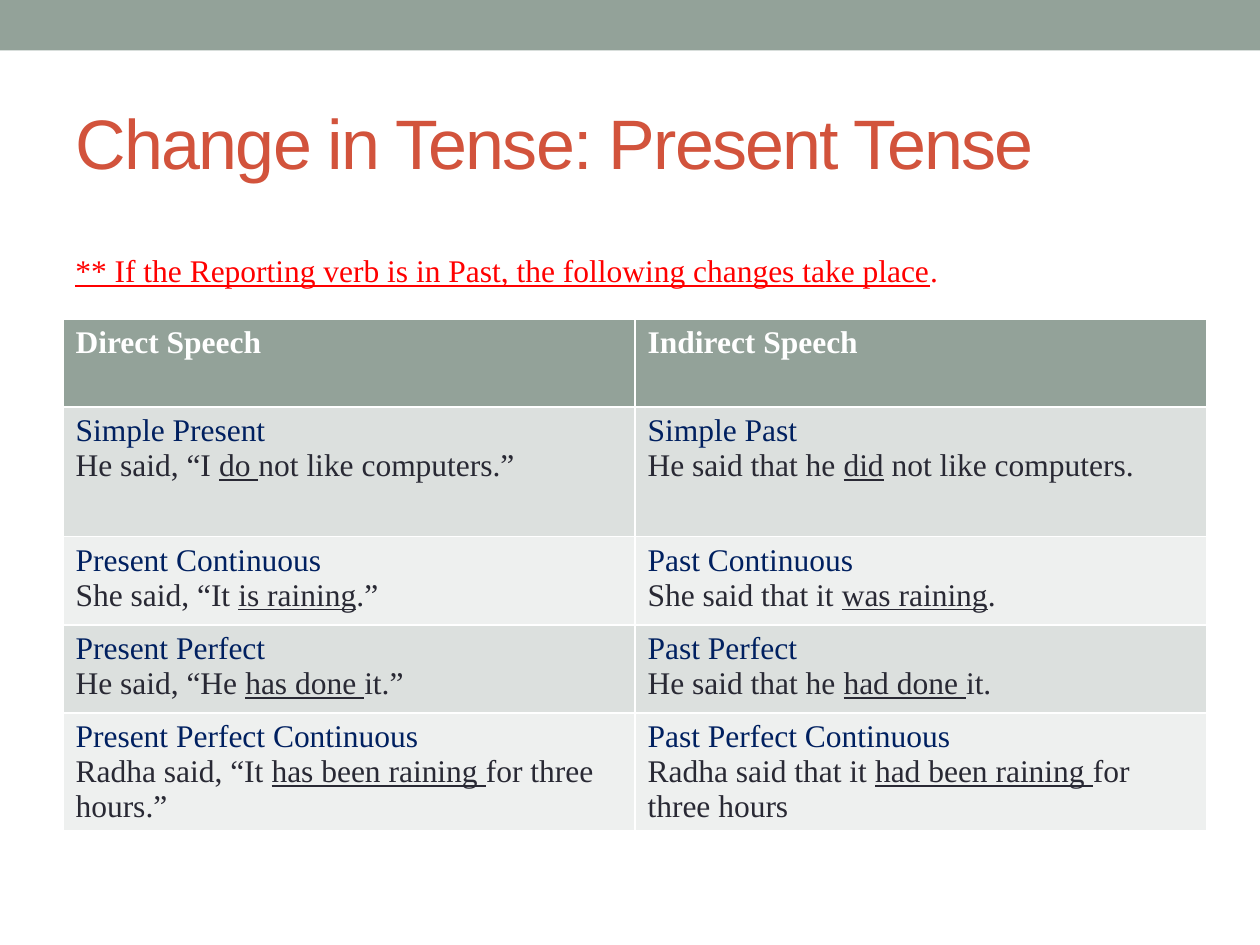
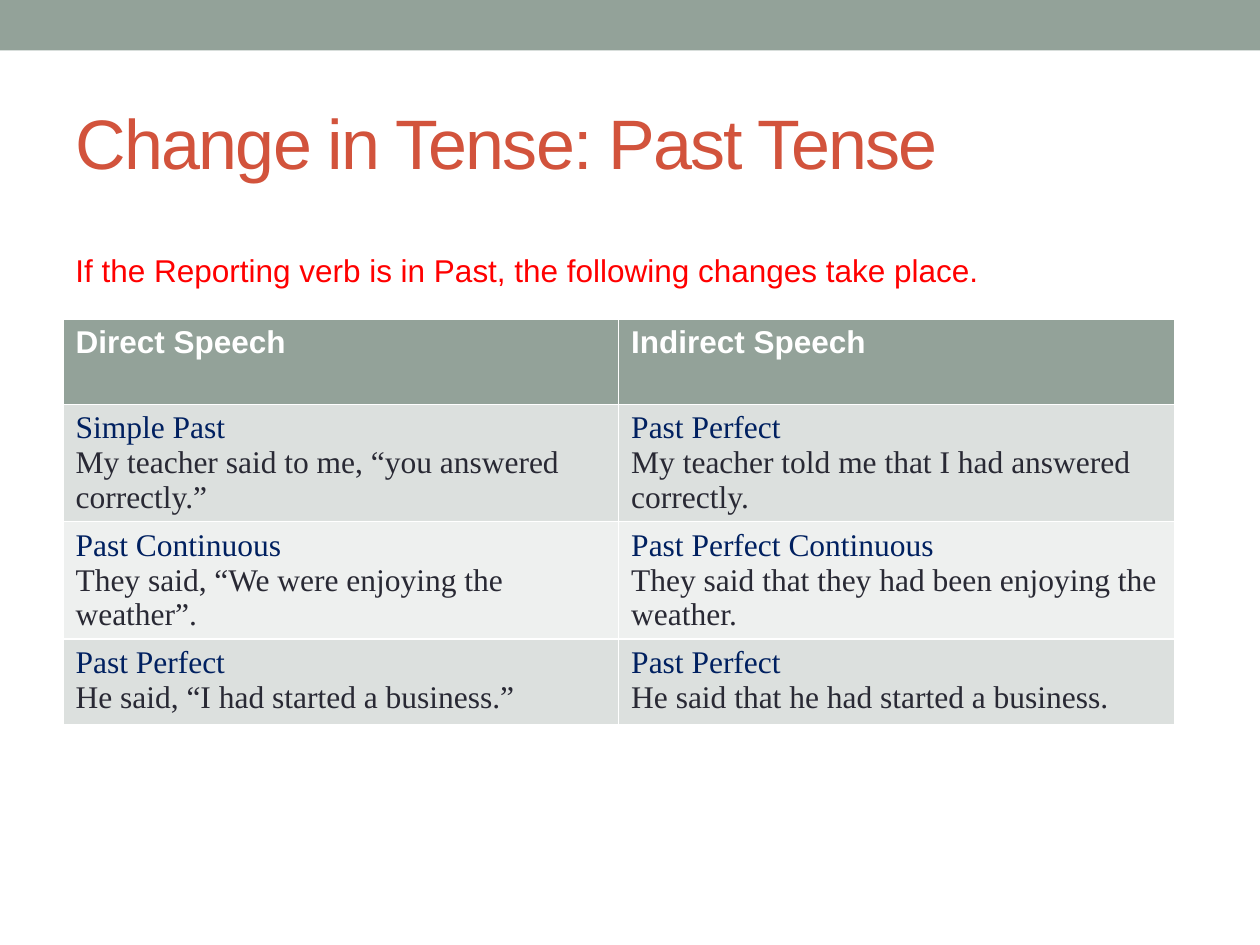
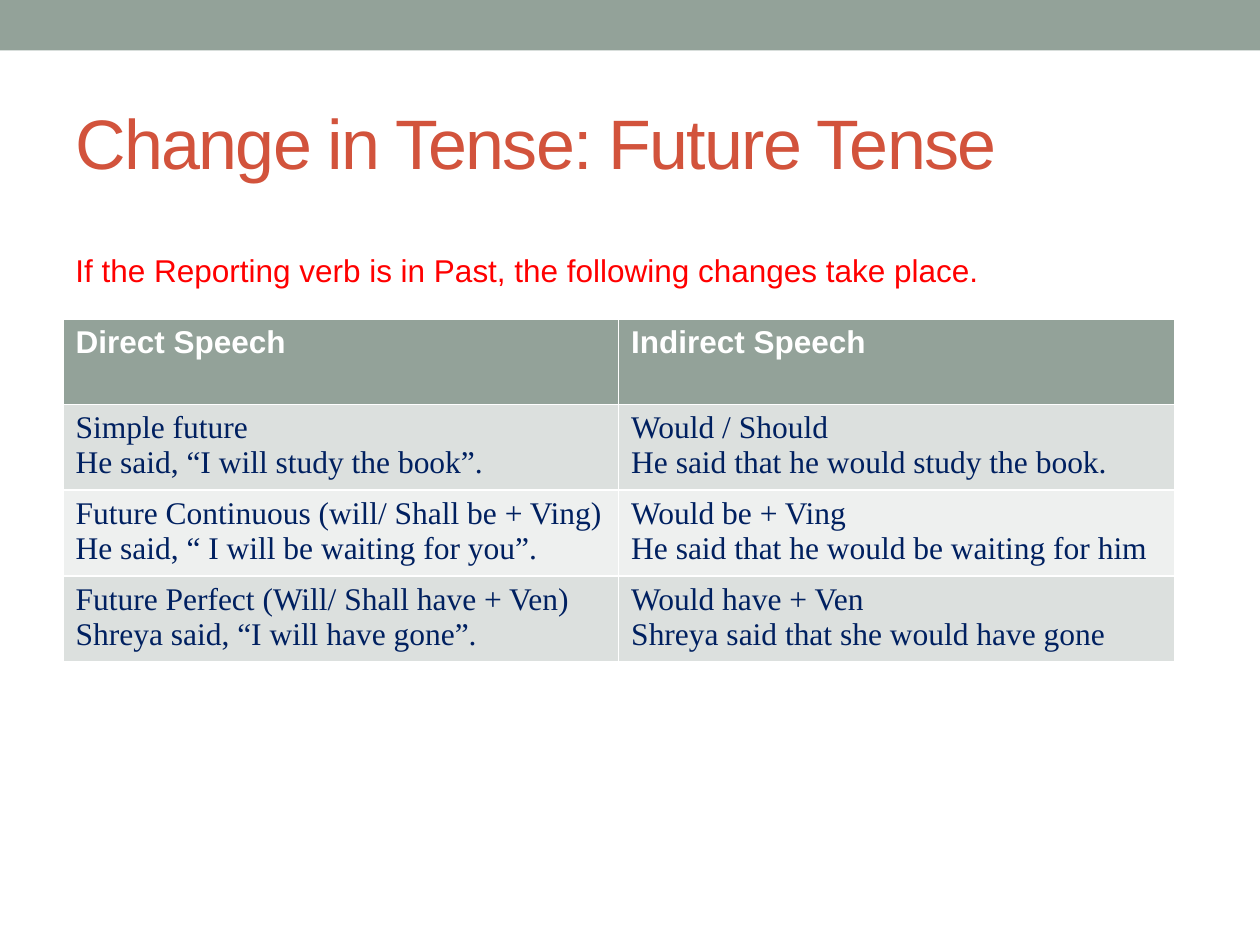
from dataclasses import dataclass

import pptx
import pptx.dml.color
import pptx.enum.shapes
import pptx.enum.text
import pptx.util
from pptx.util import Inches, Pt


def rgb(code):
    return pptx.dml.color.RGBColor.from_string(code)


@dataclass(frozen=True)
class Theme:
    sage = rgb("93A299")
    brick = rgb("D2533C")
    red = rgb("FF0000")
    navy = rgb("002060")
    ink = rgb("292934")
    white = rgb("FFFFFF")
    stripes = (rgb("DCE0DE"), rgb("EEF0EF"))
    sans = "Arial"
    serif = "Times New Roman"
    title_size = Pt(40)
    text_size = Pt(18)


THEME = Theme()
LEFT = Inches(0.5)
TEXT_WIDTH = Inches(9)
HEADINGS = ("Direct Speech", "Indirect Speech")
RULE = "If the Reporting verb is in Past, the following changes take place"

# Words between underscores are underlined. Each cell is (tense, example).
LESSONS = [
    {
        "title": "Change in Tense: Present Tense",
        "note": f"_** {RULE}_.",
        "font": THEME.serif,
        "example_color": THEME.ink,
        "column": 4.54,
        "row_heights": (0.7, 1.03, 0.7, 0.7, 0.7),
        "rows": [
            (("Simple Present", "He said, “I _do _not like computers.”"),
             ("Simple Past", "He said that he _did_ not like computers.")),
            (("Present Continuous", "She said, “It _is raining_.”"),
             ("Past Continuous", "She said that it _was raining_.")),
            (("Present Perfect", "He said, “He _has done _it.”"),
             ("Past Perfect", "He said that he _had done _it.")),
            (("Present Perfect Continuous", "Radha said, “It _has been raining _for three hours.”"),
             ("Past Perfect Continuous", "Radha said that it _had been raining _for three hours")),
        ],
    },
    {
        "title": "Change in Tense: Past Tense",
        "note": f"{RULE}.",
        "font": THEME.sans,
        "example_color": THEME.ink,
        "column": 4.41,
        "row_heights": (0.68,) * 4,
        "rows": [
            (("Simple Past", "My teacher said to me, “you answered correctly.”"),
             ("Past Perfect", "My teacher told me that I had answered correctly.")),
            (("Past Continuous", "They said, “We were enjoying the weather”."),
             ("Past Perfect Continuous", "They said that they had been enjoying the weather.")),
            (("Past Perfect", "He said, “I had started a business.”"),
             ("Past Perfect", "He said that he had started a business.")),
        ],
    },
    {
        "title": "Change in Tense: Future Tense",
        "note": f"{RULE}.",
        "font": THEME.sans,
        "example_color": THEME.navy,
        "column": 4.41,
        "row_heights": (0.68,) * 4,
        "rows": [
            (("Simple future", "He said, “I will study the book”."),
             ("Would / Should", "He said that he would study the book.")),
            (("Future Continuous (will/ Shall be + Ving)", "He said, “ I will be waiting for you”."),
             ("Would be + Ving", "He said that he would be waiting for him")),
            (("Future Perfect (Will/ Shall have + Ven)", "Shreya said, “I will have gone”."),
             ("Would have + Ven", "Shreya said that she would have gone")),
        ],
    },
]


def write(para, text, font, color, size=THEME.text_size, bold=False):
    """Fill a paragraph, underlining the words between underscores."""
    para.font.name = font
    para.font.size = size
    para.font.bold = bold
    para.font.color.rgb = color
    for index, piece in enumerate(text.split("_")):
        if piece:
            span = para.add_run()
            span.text = piece
            if index % 2:
                span.font.underline = True


def add_band(deck, page, layout):
    """Draw the top band and move it to the layout that all slides share."""
    band = page.shapes.add_shape(pptx.enum.shapes.MSO_SHAPE.RECTANGLE,
                                 0, 0, deck.slide_width, Inches(0.4))
    band.shadow.inherit = False
    band.fill.solid()
    band.fill.fore_color.rgb = THEME.sage
    band.line.fill.background()
    layout.shapes.element.insert(2, band.element)


def add_title(page, text):
    title = page.shapes.title
    title.left, title.top, title.width, title.height = LEFT, Inches(0.58), TEXT_WIDTH, Inches(1.08)
    frame = title.text_frame
    frame.auto_size = pptx.enum.text.MSO_AUTO_SIZE.NONE
    frame.vertical_anchor = pptx.enum.text.MSO_ANCHOR.MIDDLE
    para = frame.paragraphs[0]
    para.alignment = pptx.enum.text.PP_ALIGN.LEFT
    write(para, text, THEME.sans, THEME.brick, THEME.title_size)
    for span in para.runs:
        span.font._element.set("spc", "-100")


def add_note(page, text, font):
    box = page.shapes.add_textbox(LEFT, Inches(1.94), TEXT_WIDTH, Inches(0.4))
    box.text_frame.word_wrap = True
    box.text_frame.auto_size = pptx.enum.text.MSO_AUTO_SIZE.SHAPE_TO_FIT_TEXT
    write(box.text_frame.paragraphs[0], text, font, THEME.red)


def fill_cell(cell, color):
    cell.fill.solid()
    cell.fill.fore_color.rgb = color


def add_speech_table(page, lesson):
    heights = [Inches(height) for height in lesson["row_heights"]]
    width = Inches(lesson["column"])
    table = page.shapes.add_table(len(heights), len(HEADINGS), LEFT, Inches(2.53),
                                  width * len(HEADINGS), sum(heights)).table
    for row, height in zip(table.rows, heights):
        row.height = height
    for column, heading in enumerate(HEADINGS):
        table.columns[column].width = width
        cell = table.cell(0, column)
        fill_cell(cell, THEME.sage)
        write(cell.text_frame.paragraphs[0], heading, lesson["font"], THEME.white, bold=True)
    for number, row in enumerate(lesson["rows"]):
        for column, (tense, example) in enumerate(row):
            cell = table.cell(number + 1, column)
            fill_cell(cell, THEME.stripes[number % 2])
            frame = cell.text_frame
            write(frame.paragraphs[0], tense, THEME.serif, THEME.navy)
            write(frame.add_paragraph(), example, THEME.serif, lesson["example_color"])


def main():
    deck = pptx.Presentation()
    deck.slide_width, deck.slide_height = Inches(10), Inches(7.5)
    layout = deck.slide_layouts.get_by_name("Title Only")
    for number, lesson in enumerate(LESSONS):
        page = deck.slides.add_slide(layout)
        if number == 0:
            add_band(deck, page, layout)
        add_title(page, lesson["title"])
        add_speech_table(page, lesson)
        add_note(page, lesson["note"], lesson["font"])
    deck.save("out.pptx")


if __name__ == "__main__":
    main()
